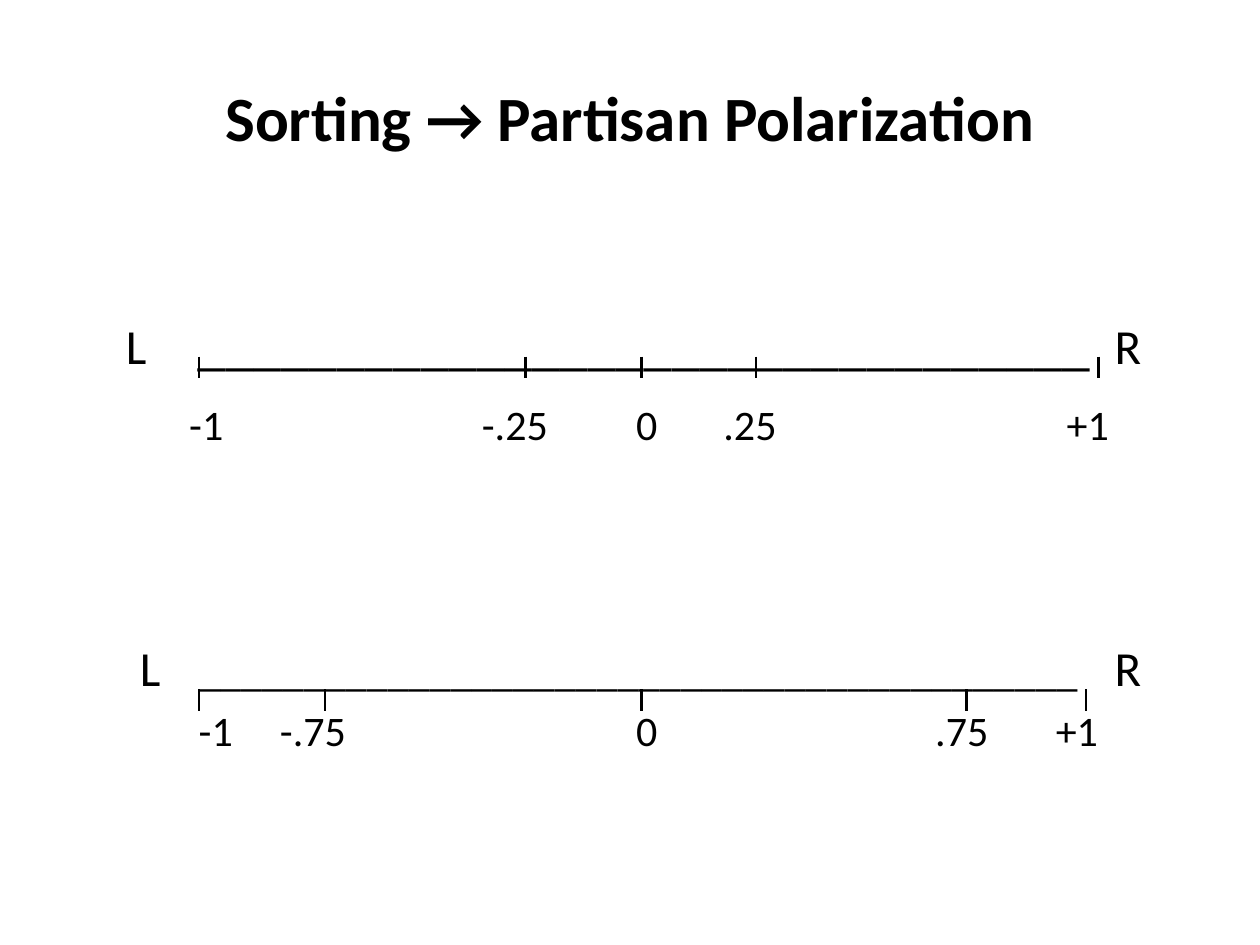
from pptx import Presentation
from pptx.dml.color import RGBColor
from pptx.enum.shapes import MSO_CONNECTOR
from pptx.enum.text import MSO_ANCHOR, PP_ALIGN
from pptx.util import Cm, Pt
from lxml.etree import SubElement
from pptx.oxml.ns import qn

COLORS = {"ink": "000000", "paper": "FFFFFF"}


class Board:
    """Holds the text style and the current slide."""

    font = "Calibri"
    ink = RGBColor.from_string(COLORS["ink"])

    def __init__(self, slide):
        self.slide = slide
        fill = slide.background.fill
        fill.solid()
        fill.fore_color.rgb = RGBColor.from_string(COLORS["paper"])

    def box(self, left, top, width, height, **form):
        shape = self.slide.shapes.add_textbox(Cm(left), Cm(top), Cm(width), Cm(height))
        frame = shape.text_frame
        for name, value in {"word_wrap": True, **form}.items():
            setattr(frame, name, value)
        return frame

    def run(self, para, text, size, bold=False):
        run = para.add_run()
        run.text = text
        form = {"name": self.font, "size": Pt(size), "bold": bold}
        for name, value in form.items():
            setattr(run.font, name, value)
        run.font.color.rgb = self.ink

    def row(self, para, runs, stops, gap):
        """Fill one paragraph whose pieces sit on tab stops."""
        para.space_before = Pt(gap)
        tabs = SubElement(para._p.get_or_add_pPr(), qn("a:tabLst"))
        for pos, kind in stops:
            SubElement(tabs, qn("a:tab"), pos=str(Cm(pos)), algn=kind)
        for text, size in runs:
            self.run(para, "\t" + text, size)

    def tick(self, x, top, end):
        line = self.slide.shapes.add_connector(
            MSO_CONNECTOR.STRAIGHT, Cm(x), Cm(top), Cm(x), Cm(end))
        line.line.width = Pt(1.5)
        line.line.color.rgb = self.ink
        SubElement(line._element.spPr, qn("a:effectLst"))


# Each scale: axis pieces, labels with their centres, gaps above, ticks
SCALES = [
    {"axis": (32, 32), "stops": (1.02, 2.46, 20.95), "gaps": (0, 13),
     "marks": {"-1": 2.64, "-.25": 8.86, "0": 11.52, ".25": 13.6, "+1": 20.41},
     "ticks": (4.01, 10.59, 12.93, 15.24, 22.15), "span": (7.19, 7.62)},
    {"axis": (42, 24), "stops": (1.3, 2.5, 20.95), "gaps": (108, 4.5),
     "marks": {"-1": 2.83, "-.75": 4.79, "0": 11.52, ".75": 17.87, "+1": 20.19},
     "ticks": (4.01, 6.55, 12.93, 19.48, 21.89), "span": (13.89, 14.33)},
]


def main():
    deck = Presentation()
    deck.slide_width, deck.slide_height = Cm(25.4), Cm(19.05)
    board = Board(deck.slides.add_slide(deck.slide_layouts[6]))

    # Title
    title = board.box(1.27, 0.76, 22.86, 3.18, vertical_anchor=MSO_ANCHOR.MIDDLE)
    title.paragraphs[0].alignment = PP_ALIGN.CENTER
    board.run(title.paragraphs[0], "Sorting → Partisan Polarization", 36, True)

    # Scales: an axis row and a label row each
    body = board.box(1.27, 4.45, 22.86, 12.57, margin_top=Cm(1.76))
    para = body.paragraphs[0]
    for scale in SCALES:
        count, size = scale["axis"]
        above, below = scale["gaps"]
        axis = [("L", 28), ("_" * count, size), ("R", 28)]
        if above:
            para = body.add_paragraph()
        board.row(para, axis, [(x, "l") for x in scale["stops"]], above)
        marks = scale["marks"]
        board.row(body.add_paragraph(), [(text, 24) for text in marks],
                  [(x, "ctr") for x in marks.values()], below)

    # Tick marks
    for scale in SCALES:
        for x in scale["ticks"]:
            board.tick(x, *scale["span"])

    deck.save("out.pptx")


if __name__ == "__main__":
    main()
